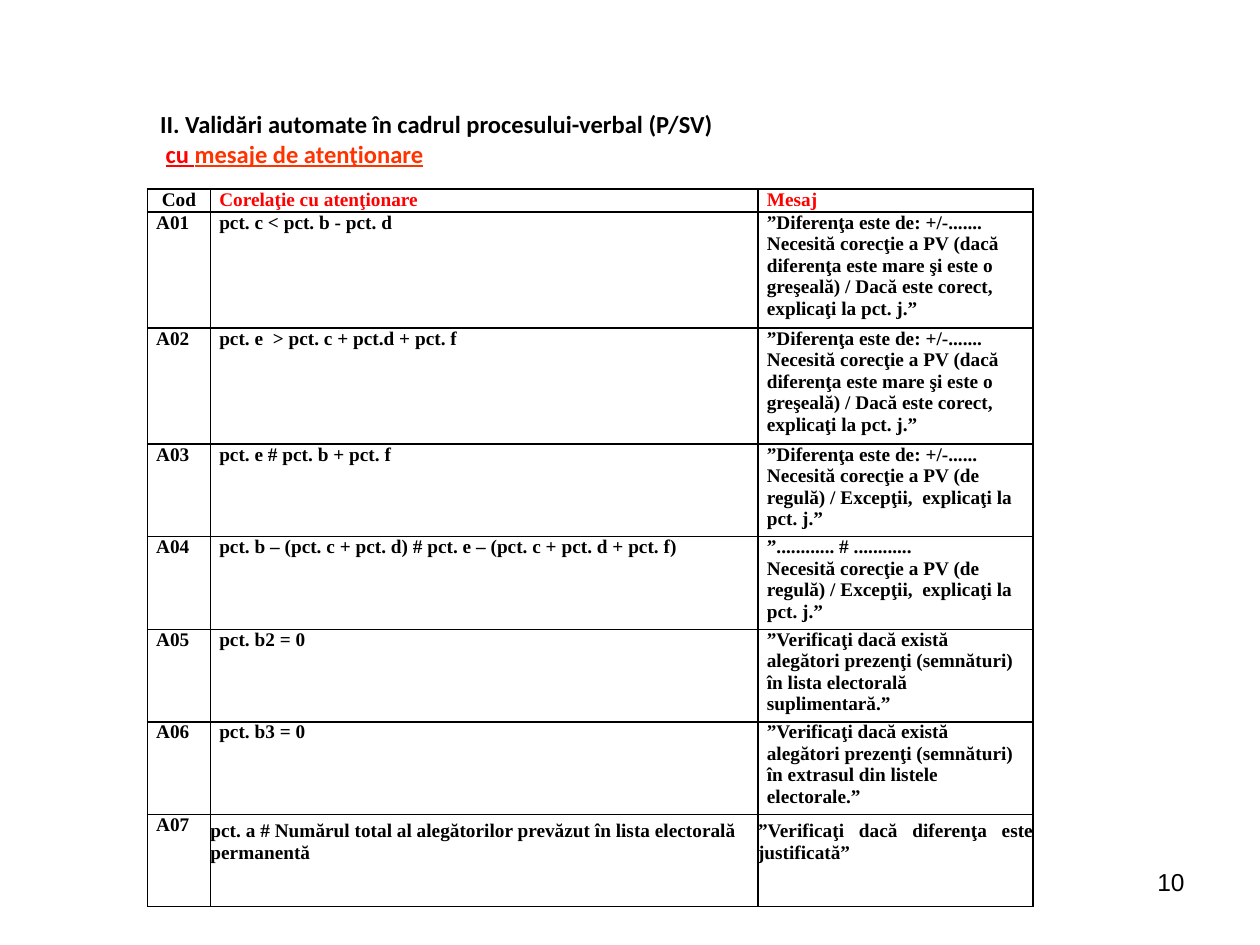
from lxml.etree import SubElement as Sub
from pptx import Presentation
from pptx.dml.color import RGBColor
from pptx.enum.text import MSO_ANCHOR as Anchor, MSO_AUTO_SIZE as Fit, PP_ALIGN as Align
from pptx.oxml.ns import qn
from pptx.util import Inches, Pt

BLACK = RGBColor(0x00, 0x00, 0x00)
RED = RGBColor(0xFF, 0x00, 0x00)
ORANGE = RGBColor(0xFF, 0x33, 0x00)
WIDE, HIGH = Inches(10), Inches(7.5)
LEFT, JUST, MID, RIGHT = Align.LEFT, Align.JUSTIFY, Align.CENTER, Align.RIGHT

COLS = [0.5, 4.34, 2.18]
ROWS = [0.18] + [0.92] * 2 + [0.73] * 5

GAP = ("”Diferenţa este de: +/-....... Necesită corecţie a PV (dacă diferenţa este mare "
       "şi este o greşeală) / Dacă este corect, explicaţi la pct. j.”")
RULE = "Necesită corecţie a PV (de regulă) / Excepţii,  explicaţi la pct. j.”"
VOTERS = "”Verificaţi dacă există alegători prezenţi (semnături) în "
HEAD = ["Cod", "Corelaţie cu atenţionare", "Mesaj"]
CHECKS = [
    ["pct. c < pct. b - pct. d", GAP],
    ["pct. e  > pct. c + pct.d + pct. f", GAP],
    ["pct. e # pct. b + pct. f", "”Diferenţa este de: +/-...... " + RULE],
    ["pct. b – (pct. c + pct. d) # pct. e – (pct. c + pct. d + pct. f)",
     "”............ # ............\n" + RULE],
    ["pct. b2 = 0", VOTERS + "lista electorală suplimentară.”"],
    ["pct. b3 = 0", VOTERS + "extrasul din listele electorale.”"],
    ["pct. a # Numărul total al alegătorilor prevăzut în lista electorală permanentă",
     "”Verificaţi dacă diferenţa este justificată”"],
]


def share(x, y, w, h):
    """Turn shares of the slide's size into a box."""
    return int(WIDE * x), int(HIGH * y), int(WIDE * w), int(HIGH * h)


def add_run(para, text, face, size, color=BLACK, bold=True, line=None):
    run = para.add_run()
    run.text = text
    font = run.font
    font.name, font.size, font.bold, font.underline = face, Pt(size), bold, line
    font.color.rgb = color


def add_title(slide, box):
    title = slide.shapes.title
    title.left, title.top, title.width, title.height = box
    frame = title.text_frame
    frame.word_wrap, frame.auto_size = True, Fit.NONE
    frame.vertical_anchor = Anchor.MIDDLE
    lines = [
        [("II. Validări automate în cadrul procesului-verbal (P/SV)", BLACK, None)],
        [(" ", RED, None), ("cu ", RED, True), ("mesaje de atenţionare", ORANGE, True)],
    ]
    for i, runs in enumerate(lines):
        para = frame.add_paragraph() if i else frame.paragraphs[0]
        para.alignment = JUST
        for text, color, line in runs:
            add_run(para, text, "Calibri", 14, color, line=line)


def add_edges(cell):
    """Draw a thin black line on all four sides."""
    props = cell._tc.get_or_add_tcPr()
    for side in ("lnL", "lnR", "lnT", "lnB"):
        edge = Sub(props, qn(f"a:{side}"), w=str(Pt(1)))
        fill = Sub(edge, qn("a:solidFill"))
        Sub(fill, qn("a:srgbClr"), val=str(BLACK))


def fill_cell(cell, text, align, color, flush):
    """Write a cell; a flush one has no side margins."""
    add_edges(cell)
    cell.fill.background()
    cell.margin_left = cell.margin_right = Inches(0 if flush else 0.07)
    cell.margin_top = cell.margin_bottom = Inches(0.05 if flush else 0)
    frame = cell.text_frame
    for i, line in enumerate(text.split("\n")):
        para = frame.add_paragraph() if i else frame.paragraphs[0]
        para.alignment = align
        add_run(para, line, "Times New Roman", 11, color)


def add_checks(slide, box):
    x, y, w, h = box
    table = slide.shapes.add_table(len(ROWS), len(COLS), x, y, w, h).table
    table.first_row = table.horz_banding = False
    for col, part in zip(table.columns, COLS):
        col.width = int(w * part / sum(COLS))
    for row, part in zip(table.rows, ROWS):
        row.height = int(h * part / sum(ROWS))
    data = [HEAD] + [[f"A{n:02}", *check] for n, check in enumerate(CHECKS, 1)]
    last = len(CHECKS)
    for r, texts in enumerate(data):
        for c, text in enumerate(texts):
            align = MID if r == c == 0 else JUST if (r, c) in ((0, 1), (last, 2)) else LEFT
            color = RED if r == 0 and c else BLACK
            fill_cell(table.cell(r, c), text, align, color, r == last and c > 0)


def add_number(slide, box):
    frame = slide.shapes.add_textbox(*box).text_frame
    frame.word_wrap = True
    para = frame.paragraphs[0]
    para.alignment = RIGHT
    add_run(para, "10", "Arial", 14, bold=False)


def main():
    deck = Presentation()
    deck.slide_width, deck.slide_height = WIDE, HIGH
    slide = deck.slides.add_slide(deck.slide_layouts[5])
    add_number(slide, share(0.717, 0.911, 0.233, 0.069))
    add_title(slide, share(0.117, 0.109, 0.725, 0.076))
    add_checks(slide, share(0.117, 0.2, 0.703, 0.757))
    deck.save("out.pptx")


if __name__ == "__main__":
    main()
